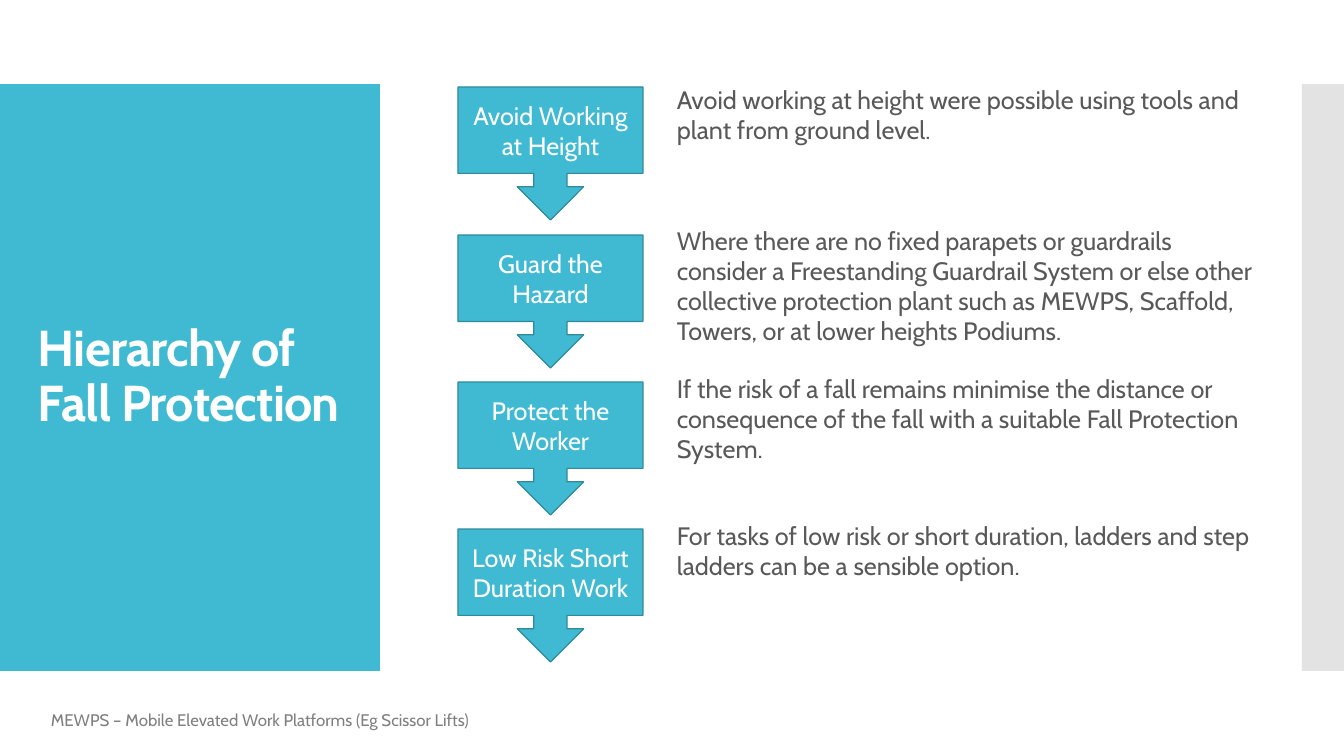
from dataclasses import dataclass

from lxml import etree
from pptx import Presentation
from pptx.dml.color import RGBColor
from pptx.enum.shapes import MSO_SHAPE
from pptx.enum.text import MSO_ANCHOR, PP_ALIGN
from pptx.oxml.ns import qn
from pptx.util import Pt

RECTANGLE = MSO_SHAPE.RECTANGLE
CALLOUT = MSO_SHAPE.DOWN_ARROW_CALLOUT
TOP, MIDDLE = MSO_ANCHOR.TOP, MSO_ANCHOR.MIDDLE
LEFT, CENTER = PP_ALIGN.LEFT, PP_ALIGN.CENTER

TITLE = "Hierarchy of Fall Protection"
FOOTNOTE = "MEWPS – Mobile Elevated Work Platforms (Eg Scissor Lifts)"
# step, explanation, top of callout, top and height of explanation (px)
STEPS = [
    ("Avoid Working at Height",
     "Avoid working at height were possible using tools and plant from ground level.",
     87, 79, 72),
    ("Guard the Hazard",
     "Where there are no fixed parapets or guardrails consider a Freestanding "
     "Guardrail System or else other collective protection plant such as MEWPS, "
     "Scaffold, Towers, or at lower heights Podiums.",
     235, 220, 132),
    ("Protect the Worker",
     "If the risk of a fall remains minimise the distance or consequence of the "
     "fall with a suitable Fall Protection System.",
     382, 368, 102),
    ("Low Risk Short Duration Work",
     "For tasks of low risk or short duration, ladders and step ladders can be a "
     "sensible option.",
     529, 515, 72),
]


@dataclass(frozen=True)
class Theme:
    font: str = "Cabin"
    accent: str = "40BAD2"
    outline: str = "2F8A9B"
    edge: str = "C8C8C8"
    edge_opacity: int = 50
    light: str = "FFFFFF"
    body: str = "595959"
    muted: str = "808080"
    title_size: int = 36
    body_size: int = 18
    note_size: int = 12
    outline_width: float = 0.85


THEME = Theme()
EMU_PER_PX = 914400 / 100.8
SLIDE_W, SLIDE_H = 1344, 756
PANEL_TOP, PANEL_H = 84, 587
PANEL_W, EDGE_W = 380, 42
CALLOUT_X, CALLOUT_W, CALLOUT_H = 458, 185, 133
DETAIL_X, DETAIL_W = 667, 599


def px(length):
    return round(length * EMU_PER_PX)


def add_block(slide, preset, box, fill, outline=None):
    block = slide.shapes.add_shape(preset, *map(px, box))
    block.shadow.inherit = False
    block.fill.solid()
    block.fill.fore_color.rgb = RGBColor.from_string(fill)
    if outline:
        block.line.color.rgb = RGBColor.from_string(outline)
        block.line.width = Pt(THEME.outline_width)
    else:
        block.line.fill.background()
    return block


def write(holder, text, size, color, anchor=TOP, align=LEFT):
    """Put one wrapped paragraph in a shape and return its paragraph and run."""
    frame = holder.text_frame
    frame.word_wrap = True
    frame.vertical_anchor = anchor
    paragraph = frame.paragraphs[0]
    paragraph.alignment = align
    run = paragraph.add_run()
    run.text = text
    run.font.name = THEME.font
    run.font.size = Pt(size)
    run.font.color.rgb = RGBColor.from_string(color)
    return paragraph, run


def add_text(slide, box, *args, **kwargs):
    return write(slide.shapes.add_textbox(*map(px, box)), *args, **kwargs)


def add_panels(slide):
    add_block(slide, RECTANGLE, (0, PANEL_TOP, PANEL_W, PANEL_H), THEME.accent)
    edge = add_block(slide, RECTANGLE,
                     (SLIDE_W - EDGE_W, PANEL_TOP, EDGE_W, PANEL_H), THEME.edge)
    color = edge.fill._xPr.find(qn("a:solidFill")).find(qn("a:srgbClr"))
    etree.SubElement(color, qn("a:alpha"), val=str(THEME.edge_opacity * 1000))


def add_title(slide):
    paragraph, run = add_text(slide, (28, 124, 325, 507), TITLE,
                              THEME.title_size, THEME.light, anchor=MIDDLE)
    paragraph.line_spacing = 0.9
    run.font.bold = True
    run._r.get_or_add_rPr().set("spc", "-60")


def add_steps(slide):
    for step, detail, callout_top, detail_top, detail_h in STEPS:
        callout = add_block(slide, CALLOUT,
                            (CALLOUT_X, callout_top, CALLOUT_W, CALLOUT_H),
                            THEME.accent, THEME.outline)
        write(callout, step, THEME.body_size, THEME.light, MIDDLE, CENTER)
        add_text(slide, (DETAIL_X, detail_top, DETAIL_W, detail_h),
                 detail, THEME.body_size, THEME.body)


def main():
    deck = Presentation()
    deck.slide_width, deck.slide_height = px(SLIDE_W), px(SLIDE_H)
    slide = deck.slides.add_slide(deck.slide_layouts[6])
    add_panels(slide)
    add_title(slide)
    add_text(slide, (41, 705, 1284, 30), FOOTNOTE, THEME.note_size, THEME.muted)
    add_steps(slide)
    deck.save("out.pptx")


if __name__ == "__main__":
    main()
